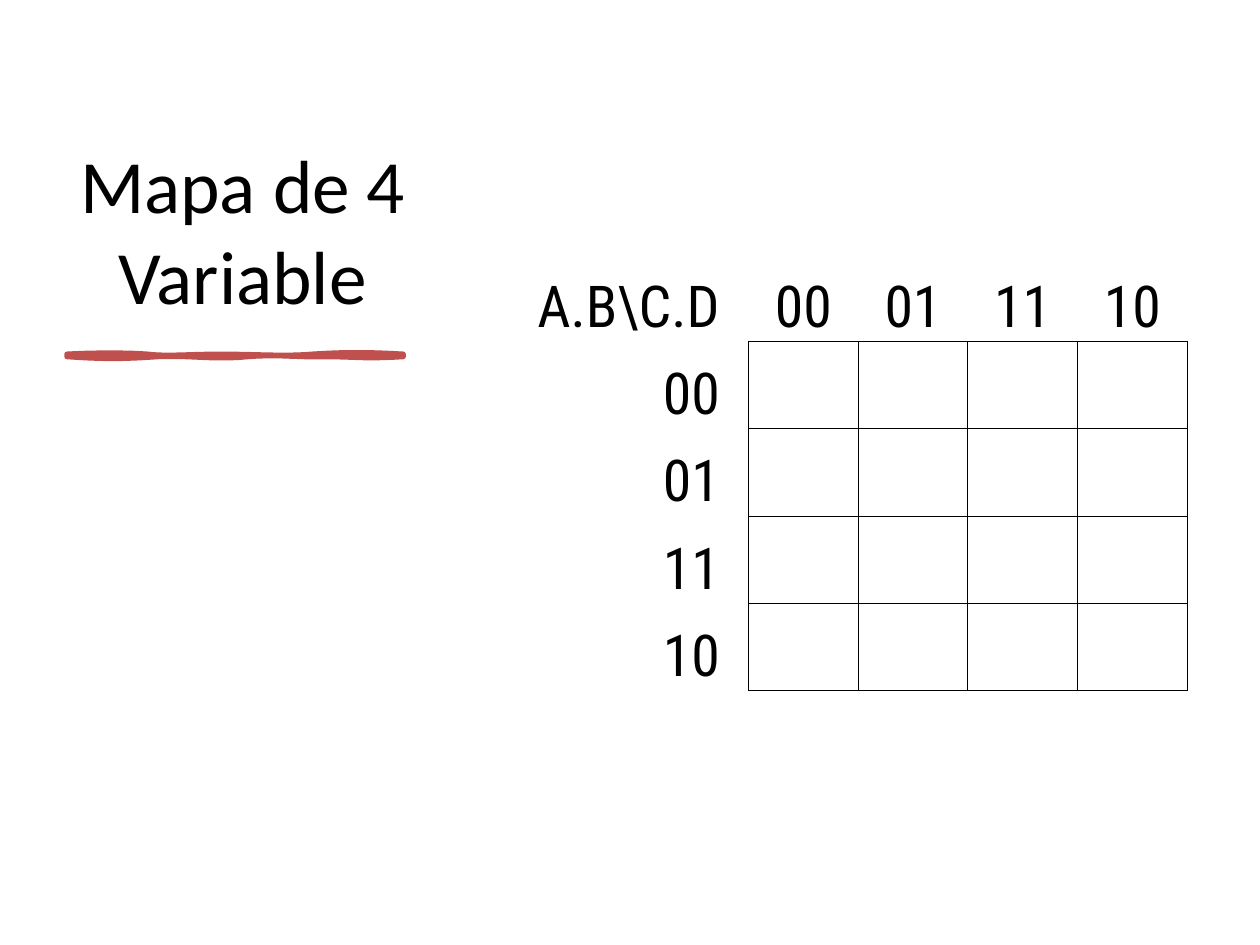
from lxml.etree import SubElement
from pptx import Presentation
from pptx.dml.color import RGBColor
from pptx.enum.text import MSO_ANCHOR, PP_ALIGN
from pptx.oxml.ns import qn
from pptx.util import Cm, Pt

BLACK = RGBColor(0, 0, 0)
RED = RGBColor(0xC0, 0x50, 0x4D)


def add_run(para, text, font, size, align):
    para.alignment = align
    run = para.add_run()
    run.text = text
    run.font.name = font
    run.font.size = Pt(size)
    run.font.color.rgb = BLACK


def set_edge(cell, side, drawn):
    line = SubElement(cell._tc.get_or_add_tcPr(), qn("a:ln" + side), w=str(Pt(0.5)))
    if drawn:
        fill = SubElement(line, qn("a:solidFill"))
        SubElement(fill, qn("a:srgbClr"), val=str(BLACK))
    else:
        SubElement(line, qn("a:noFill"))


prs = Presentation()
prs.slide_width, prs.slide_height = Cm(25.4), Cm(19.05)
slide = prs.slides.add_slide(prs.slide_layouts[6])

# Title
title = slide.shapes.add_textbox(Cm(1.32), Cm(1.78), Cm(7.14), Cm(4.78))
frame = title.text_frame
frame.word_wrap = True
frame.vertical_anchor = MSO_ANCHOR.BOTTOM
add_run(frame.paragraphs[0], "Mapa de 4 Variable", "Calibri", 43, PP_ALIGN.CENTER)

# Wavy rule under the title: Bezier curves in cm, sampled into short steps
TOP = [(1.35, 7.14), (1.91, 7.11), (2.57, 7.11), (2.97, 7.14),
       (3.35, 7.19), (3.86, 7.14), (4.47, 7.14),
       (5.05, 7.14), (5.79, 7.19), (6.3, 7.14),
       (6.81, 7.11), (7.29, 7.09), (8.13, 7.14)]
BASE = [(8.13, 7.19), (7.37, 7.24), (7.11, 7.19), (6.55, 7.19),
        (6.02, 7.21), (5.64, 7.14), (5, 7.19),
        (4.34, 7.26), (3.84, 7.16), (3.18, 7.19),
        (2.51, 7.24), (2.03, 7.24), (1.35, 7.19)]
STEPS = 10
points = []
for edge in (TOP, BASE):
    points.append([Cm(value) for value in edge[0]])
    for i in range(0, len(edge) - 1, 3):
        for step in range(1, STEPS + 1):
            t = step / STEPS
            parts = ((1 - t) ** 3, 3 * t * (1 - t) ** 2, 3 * t * t * (1 - t), t ** 3)
            points.append([
                Cm(sum(part * spot[axis] for part, spot in zip(parts, edge[i:i + 4])))
                for axis in (0, 1)])

path = slide.shapes.build_freeform(*points[0])
path.add_line_segments(points[1:], close=True)
rule = path.convert_to_shape()
rule.shadow.inherit = False
rule.fill.solid()
rule.fill.fore_color.rgb = RED
rule.line.color.rgb = RED
rule.line.width = Pt(3)

# Karnaugh map
CODES = ["00", "01", "11", "10"]
size = len(CODES) + 1
table = slide.shapes.add_table(size, size, Cm(9.86), Cm(5.11), Cm(14.07), Cm(8.8)).table
table.first_row = table.horz_banding = False
for col in range(size):
    table.columns[col].width = Cm(2.21 if col else 5.23)

for r in range(size):
    table.rows[r].height = Cm(1.76 if r else 1.77)
    for c in range(size):
        cell = table.cell(r, c)
        cell.vertical_anchor = MSO_ANCHOR.BOTTOM
        cell.margin_left = cell.margin_top = Cm(0.08)
        cell.margin_right = Cm(0.08 if c else 0.58)
        cell.margin_bottom = 0
        inner = r > 0 and c > 0
        for side, drawn in (("L", inner), ("R", r > 0), ("T", inner), ("B", c > 0)):
            set_edge(cell, side, drawn)
        cell.fill.background()
        if inner:
            continue
        text = CODES[r + c - 1] if r + c else "A.B\\C.D"
        align = PP_ALIGN.CENTER if c else PP_ALIGN.RIGHT
        add_run(cell.text_frame.paragraphs[0], text, "Roboto Condensed", 33, align)

prs.save("out.pptx")
